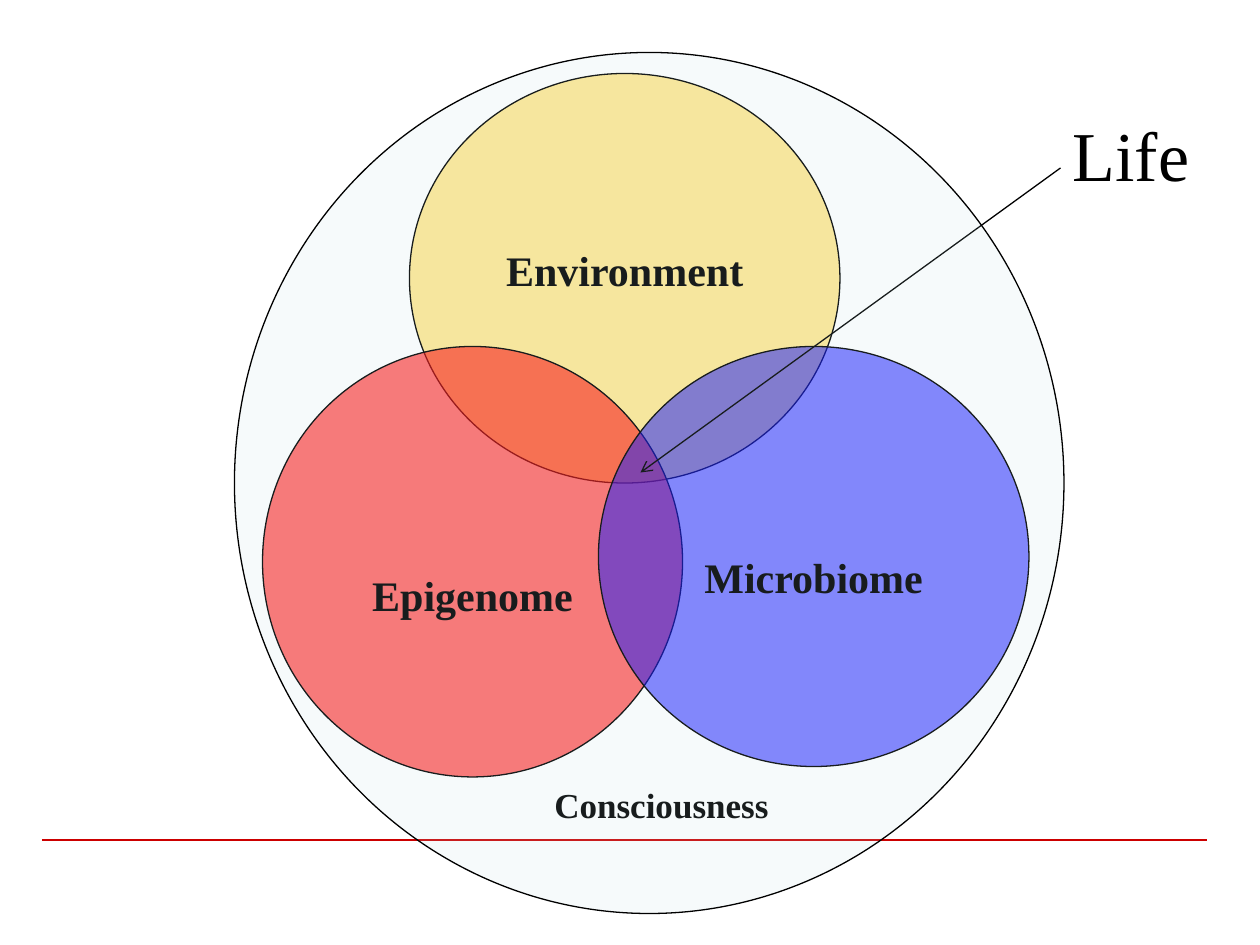
from dataclasses import dataclass

from lxml.etree import SubElement
from pptx import Presentation
from pptx.dml.color import RGBColor
from pptx.enum.shapes import MSO_CONNECTOR, MSO_SHAPE
from pptx.enum.text import MSO_ANCHOR, PP_ALIGN
from pptx.oxml.ns import qn
from pptx.util import Inches, Pt

COLORS = {
    "black": "000000",
    "rule": "CC0000",
    "environment": "FFCE13",
    "epigenome": "FF0000",
    "microbiome": "0000FF",
    "consciousness": "BBE0E3",
}
FONT = "Times New Roman"
COLUMNS, ROWS = 120, 90
WIDTH, HEIGHT = Inches(10), Inches(7.5)


@dataclass(frozen=True)
class Cells:
    """A place on the slide grid, in columns and rows."""
    column: float
    row: float
    columns: float
    rows: float

    def lengths(self) -> tuple[int, int, int, int]:
        return (across(self.column), down(self.row),
                across(self.columns), down(self.rows))


@dataclass(frozen=True)
class Circle:
    color: str
    opacity: int
    cells: Cells
    label: str = ""
    label_drop: float = 0  # inches below the middle of the circle


CIRCLES = [
    Circle("environment", 45, Cells(39, 7, 41, 39), "Environment", -0.07),
    Circle("epigenome", 58, Cells(25, 33, 40, 41), "Epigenome", 0.26),
    Circle("microbiome", 52, Cells(57, 33, 41, 40), "Microbiome", 0.16),
]
SURROUND = Circle("consciousness", 13, Cells(22.33, 5, 79, 82))


def across(columns: float) -> int:
    return round(WIDTH * columns / COLUMNS)


def down(rows: float) -> int:
    return round(HEIGHT * rows / ROWS)


def rgb(name: str) -> RGBColor:
    return RGBColor.from_string(COLORS[name])


def write(frame, text: str, *, size: int, bold: bool = False,
          align: PP_ALIGN = PP_ALIGN.CENTER) -> None:
    frame.word_wrap = True
    para = frame.paragraphs[0]
    para.alignment = align
    span = para.add_run()
    span.text = text
    span.font.name = FONT
    span.font.size = Pt(size)
    span.font.bold = bold
    span.font.color.rgb = rgb("black")


def add_circle(slide, circle: Circle) -> None:
    shape = slide.shapes.add_shape(MSO_SHAPE.OVAL, *circle.cells.lengths())
    shape.shadow.inherit = False
    shape.fill.solid()
    shape.fill.fore_color.rgb = rgb(circle.color)
    tint = shape.fill._xPr.find(qn("a:solidFill"))[0]
    SubElement(tint, qn("a:alpha"), val=str(circle.opacity * 1000))
    shape.line.color.rgb = rgb("black")
    shape.line.width = Pt(0.75)
    if circle.label:
        frame = shape.text_frame
        frame.vertical_anchor = MSO_ANCHOR.MIDDLE
        frame.margin_top = Inches(max(0, 2 * circle.label_drop))
        frame.margin_bottom = Inches(max(0, -2 * circle.label_drop))
        write(frame, circle.label, size=24, bold=True)


def add_line(slide, start: tuple[float, float], end: tuple[float, float],
             color: str, arrow: bool = False) -> None:
    line = slide.shapes.add_connector(
        MSO_CONNECTOR.STRAIGHT, across(start[0]), down(start[1]),
        across(end[0]), down(end[1]))
    line.line.color.rgb = rgb(color)
    line.line.width = Pt(0.75)
    if arrow:
        SubElement(line.line._get_or_add_ln(), qn("a:tailEnd"), type="arrow")
    SubElement(line._element.spPr, qn("a:effectLst"))


def add_text(slide, cells: Cells, text: str, **style) -> None:
    box = slide.shapes.add_textbox(*cells.lengths())
    write(box.text_frame, text, **style)


def main() -> None:
    deck = Presentation()
    deck.slide_width, deck.slide_height = WIDTH, HEIGHT
    slide = deck.slides.add_slide(deck.slide_layouts.get_by_name("Blank"))

    add_line(slide, (4, 80), (115, 80), "rule")
    for circle in CIRCLES:
        add_circle(slide, circle)
    add_line(slide, (101, 16), (61, 45), "black", arrow=True)
    add_text(slide, Cells(101, 10, 19, 9.25), "Life", size=40, align=PP_ALIGN.LEFT)
    add_text(slide, Cells(47, 74, 32, 5.25), "Consciousness", size=20, bold=True)
    add_circle(slide, SURROUND)

    deck.save("out.pptx")


if __name__ == "__main__":
    main()
